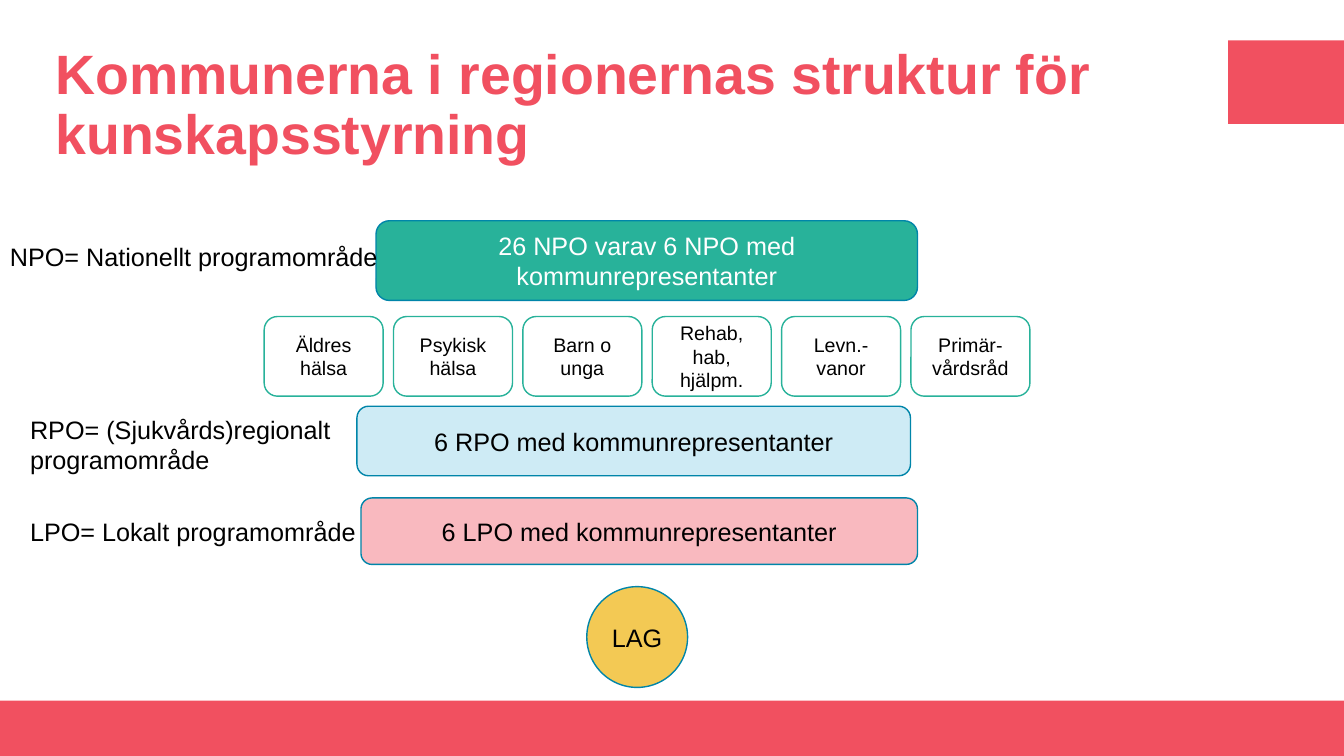
from pptx import Presentation
from pptx.dml.color import RGBColor
from pptx.enum.shapes import MSO_SHAPE
from pptx.enum.text import MSO_ANCHOR, PP_ALIGN
from pptx.util import Inches, Pt

RED = RGBColor(0xF1, 0x50, 0x60)
GREEN = RGBColor(0x28, 0xB2, 0x9A)
BLUE = RGBColor(0x00, 0x85, 0xA9)
PALE = RGBColor(0xCE, 0xEB, 0xF5)
PINK = RGBColor(0xF9, 0xB9, 0xBF)
GOLD = RGBColor(0xF3, 0xC9, 0x54)
WHITE = RGBColor(0xFF, 0xFF, 0xFF)
BLACK = RGBColor(0x00, 0x00, 0x00)

deck = Presentation()
deck.slide_width, deck.slide_height = Inches(13.33), Inches(7.5)
slide = deck.slides.add_slide(deck.slide_layouts[5])


def write(shape, text, size=18, color=BLACK, bold=False, align=PP_ALIGN.LEFT,
          anchor=MSO_ANCHOR.MIDDLE, wrap=True):
    frame = shape.text_frame
    frame.word_wrap = wrap
    frame.vertical_anchor = anchor
    frame.text = text
    para = frame.paragraphs[0]
    para.alignment = align
    font = para.font
    font.name, font.size, font.bold = "Arial", Pt(size), bold
    font.color.rgb = color
    return para


def draw(kind, place, fill, line=None):
    shape = slide.shapes.add_shape(kind, *map(Inches, place))
    shape.shadow.inherit = False
    shape.fill.solid()
    shape.fill.fore_color.rgb = fill
    if line is None:
        shape.line.fill.background()
    else:
        shape.line.color.rgb = line
        shape.line.width = Pt(1)
    return shape


# Red bands at the foot and the right edge
draw(MSO_SHAPE.RECTANGLE, (0, 6.95, 13.33, 0.55), RED)
draw(MSO_SHAPE.RECTANGLE, (12.18, 0.4, 1.15, 0.83), RED)

# Title
title = slide.shapes.title
title.left, title.top = Inches(0.45), Inches(0.4)
title.width, title.height = Inches(11.61), Inches(1.32)
para = write(title, "Kommunerna i regionernas struktur för kunskapsstyrning",
             size=39.6, color=RED, bold=True)
para.line_spacing = 0.9

# One bar for each level, and the team circle
levels = [
    (MSO_SHAPE.ROUNDED_RECTANGLE, (3.73, 2.19, 5.37, 0.79), GREEN, WHITE,
     "26 NPO varav 6 NPO med kommunrepresentanter"),
    (MSO_SHAPE.ROUNDED_RECTANGLE, (3.54, 4.03, 5.49, 0.69), PALE, BLACK,
     "6 RPO med kommunrepresentanter"),
    (MSO_SHAPE.ROUNDED_RECTANGLE, (3.58, 4.94, 5.52, 0.66), PINK, BLACK,
     "6 LPO med kommunrepresentanter"),
    (MSO_SHAPE.OVAL, (5.82, 5.82, 1, 1), GOLD, BLACK, "LAG"),
]
for kind, place, fill, color, text in levels:
    write(draw(kind, place, fill, BLUE), text, color=color,
          align=PP_ALIGN.CENTER)

# Row of the six national areas
areas = ["Äldres hälsa", "Psykisk hälsa", "Barn o unga",
         "Rehab, hab, hjälpm.", "Levn.-vanor", "Primär-vårdsråd"]
for col, text in enumerate(areas):
    box = draw(MSO_SHAPE.ROUNDED_RECTANGLE,
               (2.62 + 1.283 * col, 3.14, 1.18, 0.79), WHITE, GREEN)
    write(box, text, size=14, align=PP_ALIGN.CENTER)

# Meaning of the short names
terms = [
    ((0, 2.34, 3.95, 0.4), "NPO= Nationellt programområde", False),
    ((0.2, 4.06, 3.34, 0.71), "RPO= (Sjukvårds)regionalt programområde", True),
    ((0.2, 5.07, 3.53, 0.4), "LPO= Lokalt programområde", False),
]
for place, text, wrap in terms:
    label = slide.shapes.add_textbox(*map(Inches, place))
    write(label, text, anchor=MSO_ANCHOR.TOP, wrap=wrap)

deck.save("out.pptx")
